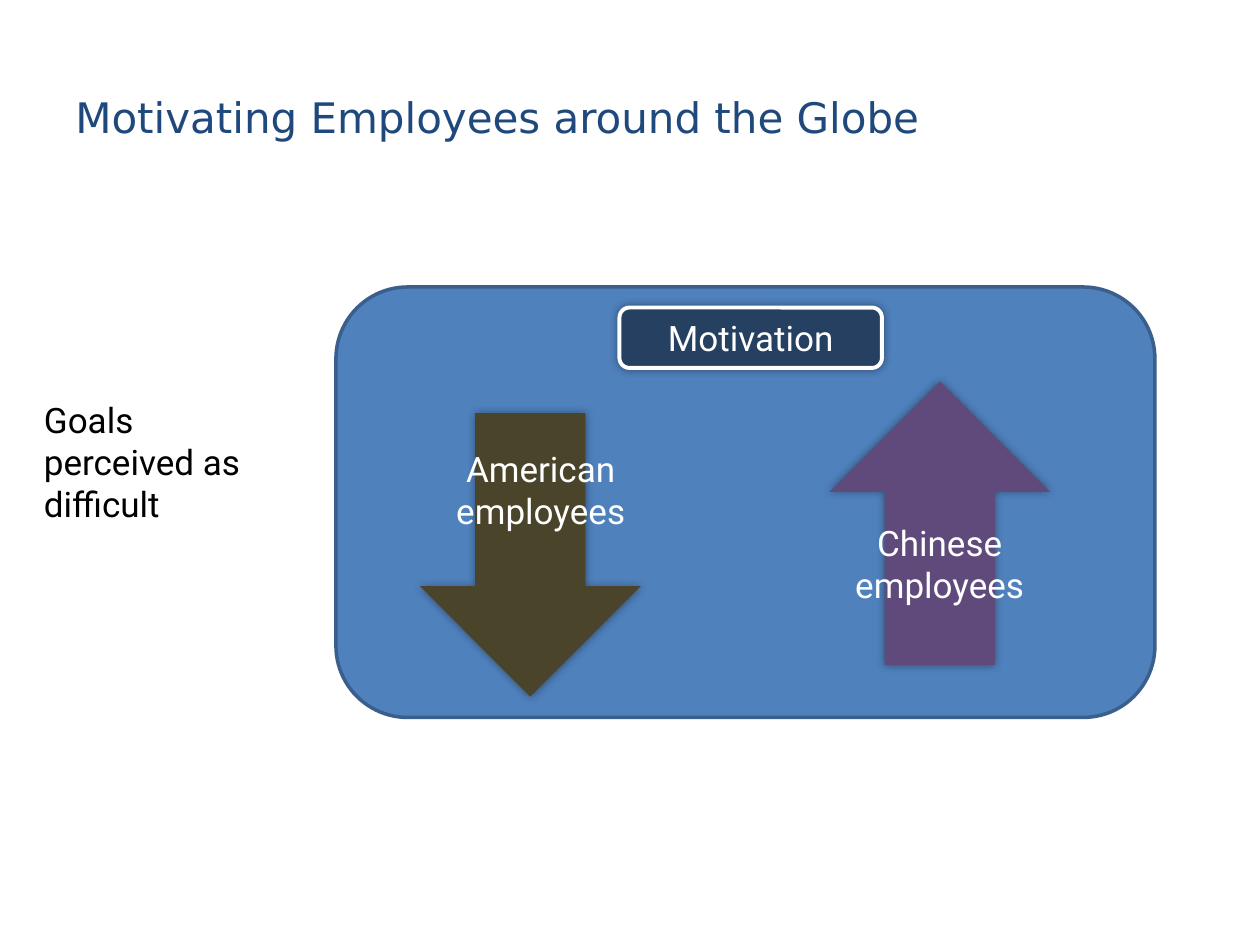
from dataclasses import dataclass

from lxml.etree import SubElement
from pptx import Presentation
from pptx.dml.color import RGBColor
from pptx.enum.shapes import MSO_SHAPE
from pptx.enum.text import MSO_ANCHOR, PP_ALIGN
from pptx.oxml.ns import qn
from pptx.util import Pt


@dataclass(frozen=True)
class Theme:
    title: str = "1F497D"
    text: str = "000000"
    light: str = "FFFFFF"
    panel: str = "4F81BD"
    panel_line: str = "3A5F8C"
    label: str = "254061"
    american: str = "4A452A"
    chinese: str = "604A7B"
    title_font: str = "DejaVu Sans"
    body_font: str = "Roboto"
    title_size: int = 24
    body_size: int = 20


THEME = Theme()


def rgb(value):
    return RGBColor.from_string(value)


def write(s, text, color, align=PP_ALIGN.LEFT, anchor=MSO_ANCHOR.TOP,
          font=THEME.body_font, size=THEME.body_size):
    tf = s.text_frame
    tf.word_wrap = True
    tf.vertical_anchor = anchor
    p = tf.paragraphs[0]
    p.alignment = align
    r = p.add_run()
    r.text = text
    r.font.color.rgb = rgb(color)
    for name, value in {"name": font, "size": Pt(size)}.items():
        setattr(r.font, name, value)


def add_text(slide, box, text, color, **formats):
    s = slide.shapes.add_textbox(*map(Pt, box))
    write(s, text, color, **formats)


def add_shape(slide, kind, box, fill, line=None, width=0):
    s = slide.shapes.add_shape(kind, *map(Pt, box))
    s.shadow.inherit = False
    s.fill.solid()
    s.fill.fore_color.rgb = rgb(fill)
    if line:
        s.line.color.rgb = rgb(line)
        s.line.width = Pt(width)
    else:
        s.line.fill.background()
    return s


def add_glow_shadow(s, blur=5, opacity=40):
    """Put a soft black shadow with no offset behind the shape."""
    effects = s._element.spPr.find(qn("a:effectLst"))
    shadow = SubElement(effects, qn("a:outerShdw"), blurRad=str(Pt(blur)),
                        dist="0", dir="0", rotWithShape="0")
    color = SubElement(shadow, qn("a:srgbClr"), val="000000")
    SubElement(color, qn("a:alpha"), val=str(opacity * 1000))


def add_arrow(slide, left, top, fill, rotation=0):
    s = add_shape(slide, MSO_SHAPE.DOWN_ARROW, (left, top, 126, 162), fill)
    s.rotation = rotation
    add_glow_shadow(s)


def add_arrow_label(slide, left, top, text):
    add_text(slide, (left, top, 138, 55.5), text, THEME.light,
             align=PP_ALIGN.CENTER, anchor=MSO_ANCHOR.MIDDLE)


def add_motivation_label(slide):
    s = add_shape(slide, MSO_SHAPE.ROUNDED_RECTANGLE, (354, 175.75, 150, 34.5),
                  THEME.label, THEME.light, 2.25)
    add_glow_shadow(s)
    write(s, "Motivation", THEME.light, align=PP_ALIGN.CENTER)


def main():
    prs = Presentation()
    prs.slide_width, prs.slide_height = Pt(720), Pt(540)
    slide = prs.slides.add_slide(prs.slide_layouts[6])

    add_text(slide, (36, 21.6, 648, 90), "Motivating Employees around the Globe",
             THEME.title, anchor=MSO_ANCHOR.MIDDLE,
             font=THEME.title_font, size=THEME.title_size)
    add_text(slide, (18, 224, 156, 80), "Goals perceived as difficult", THEME.text)
    add_shape(slide, MSO_SHAPE.ROUNDED_RECTANGLE, (192, 164, 468, 246),
              THEME.panel, THEME.panel_line, 2)
    add_motivation_label(slide)

    add_arrow(slide, 240, 236, THEME.american)
    add_arrow_label(slide, 240, 252, "American employees")
    add_arrow(slide, 474, 218, THEME.chinese, rotation=180)
    add_arrow_label(slide, 468, 294, "Chinese employees")

    prs.save("out.pptx")


if __name__ == "__main__":
    main()
